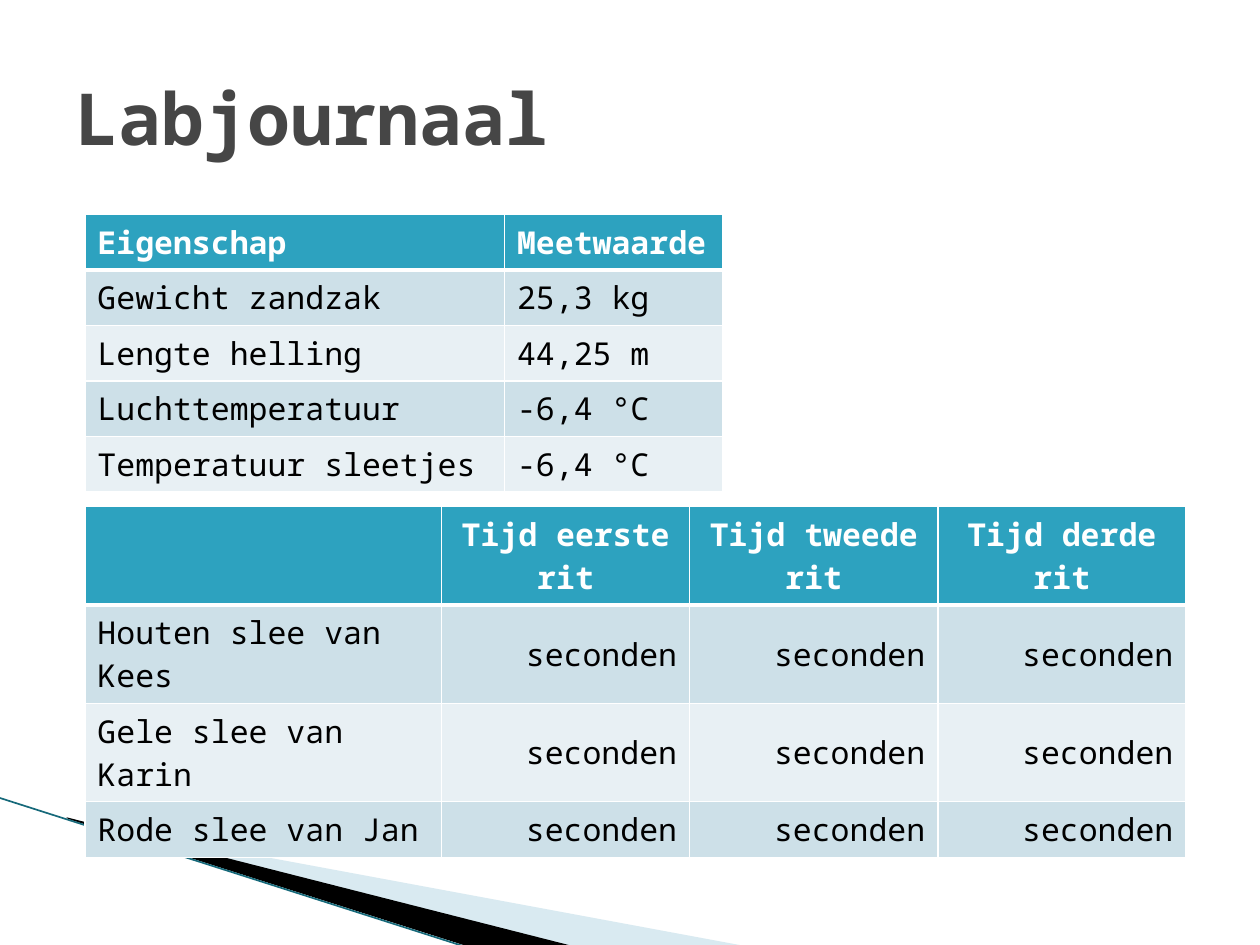
from dataclasses import dataclass

from lxml import etree
from pptx import Presentation
from pptx.dml.color import RGBColor
from pptx.enum.shapes import MSO_CONNECTOR
from pptx.enum.text import MSO_ANCHOR, MSO_AUTO_SIZE, PP_ALIGN
from pptx.oxml.ns import qn
from pptx.util import Pt

LEFT, MID, RIGHT = PP_ALIGN.LEFT, PP_ALIGN.CENTER, PP_ALIGN.RIGHT
TOP, CENTER = MSO_ANCHOR.TOP, MSO_ANCHOR.MIDDLE
STRAIGHT = MSO_CONNECTOR.STRAIGHT
FONT = "Noto Sans Mono"
WHITE, BLACK, GRAY, TEAL = "FFFFFF", "000000", "464646", "2DA2BF"
BANDS = ("CDE0E8", "E8F0F4")
ROW = 29.2


@dataclass
class Wedge:
    points: list[tuple[float, float]]
    color: str
    alpha: int = 100


@dataclass
class Grid:
    left: float
    top: float
    widths: list[float]
    rows: list[list[str]]
    head: PP_ALIGN = LEFT
    body: PP_ALIGN = LEFT
    anchor: MSO_ANCHOR = TOP


WEDGES = [
    Wedge([(39.6, 468.7), (428.4, 540.7), (328.3, 540.7), (39.6, 468)], "A0CBDC", 40),
    Wedge([(38.2, 467.3), (329, 540.7), (267.8, 541.4), (38.9, 468)], BLACK),
]

TIMES = ["seconden"] * 3
GRIDS = [
    Grid(48.5, 289.5, [203.8, 141.8, 141.8, 141.8], [
        ["", "Tijd eerste rit", "Tijd tweede rit", "Tijd derde rit"],
        ["Houten slee van Kees", *TIMES],
        ["Gele slee van Karin", *TIMES],
        ["Rode slee van Jan", *TIMES],
    ], MID, RIGHT, CENTER),
    Grid(48.5, 122.6, [239.8, 125], [
        ["Eigenschap", "Meetwaarde"],
        ["Gewicht zandzak", "25,3 kg"],
        ["Lengte helling", "44,25 m"],
        ["Luchttemperatuur", "-6,4 °C"],
        ["Temperatuur sleetjes", "-6,4 °C"],
    ]),
]


def paint(target, color: str) -> None:
    target.solid()
    target.fore_color.rgb = RGBColor.from_string(color)


def write(frame, text: str, *, size: float = 18, color: str = BLACK,
          bold: bool = False, align: PP_ALIGN = LEFT) -> None:
    para = frame.paragraphs[0]
    para.alignment = align
    para.font.size = Pt(size)
    if text:
        run = para.add_run()
        run.text = text
        run.font.name = FONT
        run.font.size = Pt(size)
        run.font.bold = bold
        run.font.color.rgb = RGBColor.from_string(color)


def edge(cell, side: str, width: float) -> None:
    props = cell._tc.get_or_add_tcPr()
    line = etree.SubElement(props, qn(f"a:ln{side}"), w=str(Pt(width)))
    fill = etree.SubElement(line, qn("a:solidFill"))
    etree.SubElement(fill, qn("a:srgbClr"), val=WHITE)


def draw_wedge(slide, wedge: Wedge) -> None:
    first, *rest = wedge.points
    pen = slide.shapes.build_freeform(*first, scale=Pt(1))
    pen.add_line_segments(rest)
    shape = pen.convert_to_shape()
    shape.shadow.inherit = False
    shape.line.fill.background()
    paint(shape.fill, wedge.color)
    if wedge.alpha < 100:
        tint = shape.fill._xPr.find(f".//{qn('a:srgbClr')}")
        etree.SubElement(tint, qn("a:alpha"), val=str(wedge.alpha * 1000))


def draw_line(slide, start: tuple, end: tuple, color: str, width: float) -> None:
    ends = [Pt(value) for value in (*start, *end)]
    line = slide.shapes.add_connector(STRAIGHT, *ends)
    line.line.width = Pt(width)
    paint(line.line.fill, color)
    etree.SubElement(line._element.spPr, qn("a:effectLst"))


def draw_grid(slide, grid: Grid) -> None:
    count = len(grid.rows)
    frame = slide.shapes.add_table(
        count, len(grid.widths), Pt(grid.left), Pt(grid.top),
        Pt(sum(grid.widths)), Pt(ROW * count))
    table = frame.table
    for col, width in zip(table.columns, grid.widths):
        col.width = Pt(width)
    for r, texts in enumerate(grid.rows):
        table.rows[r].height = Pt(ROW)
        for c, text in enumerate(texts):
            cell = table.cell(r, c)
            head = r == 0
            for side in "LRTB":
                thick = (r, side) in ((0, "B"), (1, "T"))
                edge(cell, side, 3 if thick else 1)
            paint(cell.fill, TEAL if head else BANDS[(r - 1) % 2])
            if head:
                align = grid.head
            else:
                align = grid.body if c else LEFT
            cell.vertical_anchor = grid.anchor if c and not head else TOP
            write(cell.text_frame, text, color=WHITE if head else BLACK,
                  bold=head, align=align)


def draw_title(slide, text: str) -> None:
    title = slide.shapes.title
    title.left, title.top = Pt(36), Pt(21.6)
    title.width, title.height = Pt(648), Pt(90)
    frame = title.text_frame
    frame.auto_size = MSO_AUTO_SIZE.NONE
    frame.word_wrap = True
    frame.vertical_anchor = CENTER
    write(frame, text, size=41, color=GRAY, bold=True)


def main() -> None:
    deck = Presentation()
    deck.slide_width, deck.slide_height = Pt(720), Pt(540)
    slide = deck.slides.add_slide(deck.slide_layouts[5])
    paint(slide.background.fill, WHITE)
    for wedge in WEDGES:
        draw_wedge(slide, wedge)
    draw_line(slide, (-0.7, 455.8), (267.1, 541.4), "16697A", 0.95)
    draw_title(slide, "Labjournaal")
    for grid in GRIDS:
        draw_grid(slide, grid)
    deck.save("out.pptx")


if __name__ == "__main__":
    main()
